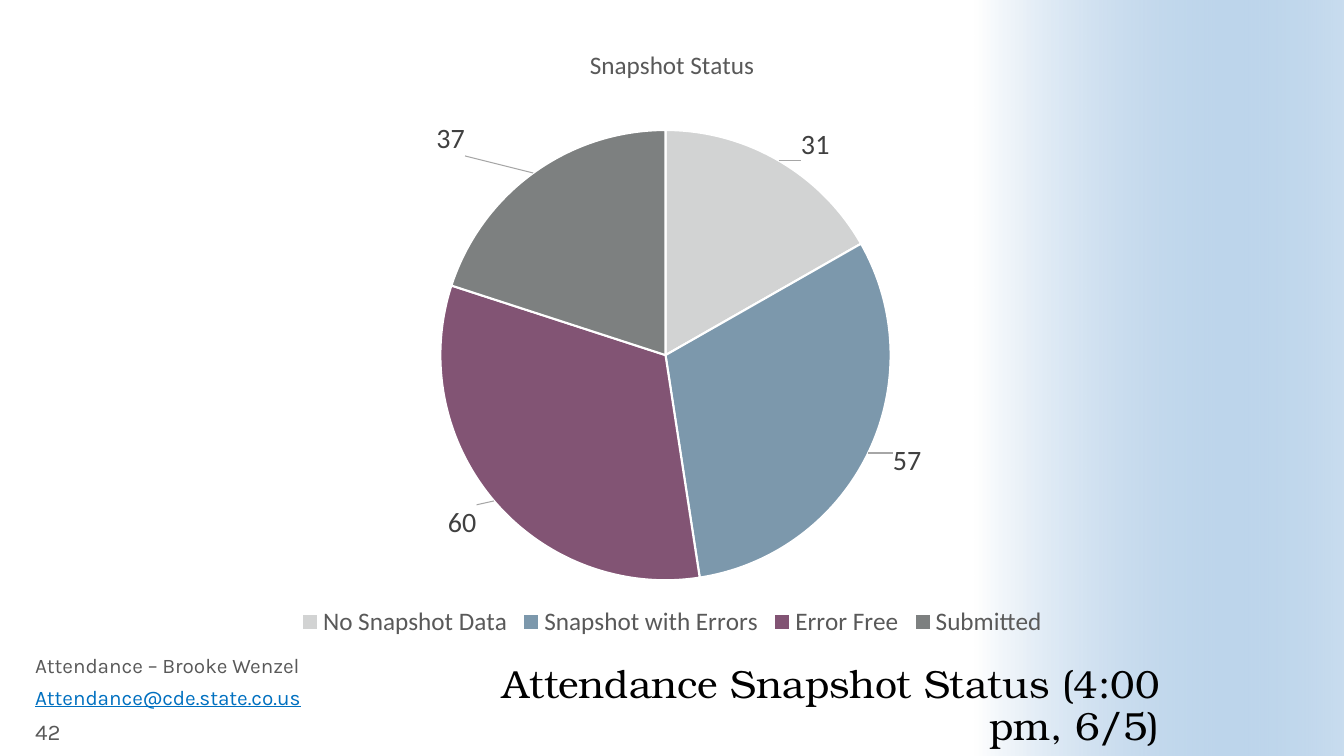
from lxml import etree
from pptx import Presentation
from pptx import util as u
from pptx.chart import data as chart_data
from pptx.dml.color import RGBColor
from pptx.enum import chart as charts, shapes, text
from pptx.oxml import ns, parse_xml

COLOURS = {
    "white": "FFFFFF", "panel": "488BC9", "title": "000000", "grey": "595959",
    "link": "0070C0", "label": "404040", "leader": "A6A6A6",
}
STATUSES = [
    ("No Snapshot Data", 31, "D2D3D3", (0.015, 0.01)),
    ("Snapshot with Errors", 57, "7C98AC", (0.015, -0.02)),
    ("Error Free", 60, "825474", (-0.01, 0)),
    ("Submitted", 37, "7D8080", (-0.05, -0.02)),
]


def colour(name):
    """Return the colour for a palette name or a hex string."""
    return RGBColor.from_string(COLOURS.get(name, name))


def set_font(font, name, size, tint):
    """Set typeface, size and colour of a font."""
    font.name, font.size, font.bold = name, u.Pt(size), False
    font.color.rgb = colour(tint)


def manual_layout(x, y, width=None, height=None):
    """Build a chart layout element from fractions of the chart."""
    values = [("x", x), ("y", y)]
    if width is not None:
        values = [("layoutTarget", "inner"), ("xMode", "edge"), ("yMode", "edge"),
                  *values, ("w", width), ("h", height)]
    layout = etree.Element(ns.qn("c:layout"))
    manual = etree.SubElement(layout, ns.qn("c:manualLayout"))
    for tag, value in values:
        etree.SubElement(manual, ns.qn(f"c:{tag}"), val=str(value))
    return layout


def add_panel(page, left, top, width, height):
    """Draw the side panel that fades from white to translucent blue."""
    panel = page.shapes.add_shape(
        shapes.MSO_SHAPE.RECTANGLE, u.Pt(left), u.Pt(top), u.Pt(width), u.Pt(height))
    panel.shadow.inherit = False
    panel.line.fill.background()
    panel.fill.gradient()
    panel.fill.gradient_angle = 0
    for stop, name in zip(panel.fill.gradient_stops, ("white", "panel")):
        stop.color.rgb = colour(name)
    tint = panel.fill._fill._gradFill.findall(".//" + ns.qn("a:srgbClr"))[-1]
    etree.SubElement(tint, ns.qn("a:alpha"), val="30000")


def add_status_chart(page, left, top, width, height):
    """Add the pie of snapshot statuses with its title, legend and labels."""
    source = chart_data.CategoryChartData()
    source.categories = [status[0] for status in STATUSES]
    source.add_series("Series 1", [status[1] for status in STATUSES])
    chart = page.shapes.add_chart(
        charts.XL_CHART_TYPE.PIE, u.Pt(left), u.Pt(top), u.Pt(width), u.Pt(height), source).chart
    set_font(chart.font, "Calibri", 10, "title")
    chart.has_title = True
    title = chart.chart_title.text_frame.paragraphs[0]
    title.text = "Snapshot Status"
    set_font(title.font, "Calibri", 18, "grey")
    chart.has_legend = True
    chart.legend.position = charts.XL_LEGEND_POSITION.BOTTOM
    chart.legend.include_in_layout = False
    set_font(chart.legend.font, "Calibri", 18, "grey")

    plot_area = chart._chartSpace.chart.plotArea
    for old in plot_area.findall(ns.qn("c:layout")):
        plot_area.remove(old)
    plot_area.insert(0, manual_layout(0.32, 0.17, 0.35, 0.73))

    plot = chart.plots[0]
    plot.vary_by_categories = True
    series = plot.series[0]
    labels = series.data_labels
    labels.show_value = True
    labels.position = charts.XL_LABEL_POSITION.OUTSIDE_END
    set_font(labels.font, "Calibri", 20, "label")
    for index, (_, _, fill, offset) in enumerate(STATUSES):
        point = series.points[index]
        point.format.fill.solid()
        point.format.fill.fore_color.rgb = colour(fill)
        point.format.line.color.rgb = colour("white")
        point.format.line.width = u.Pt(1.5)
        set_font(point.data_label.font, "Calibri", 20, "label")
        point.data_label.position = charts.XL_LABEL_POSITION.OUTSIDE_END
        element = labels._element.findall(ns.qn("c:dLbl"))[index]
        element.insert(1, manual_layout(*offset))
    for old in labels._element.findall(ns.qn("c:showLeaderLines")):
        labels._element.remove(old)
    etree.SubElement(labels._element, ns.qn("c:showLeaderLines"), val="1")
    labels._element.append(parse_xml(
        f'<c:leaderLines {ns.nsdecls("c", "a")}><c:spPr><a:ln w="9525"><a:solidFill>'
        f'<a:srgbClr val="{COLOURS["leader"]}"/></a:solidFill></a:ln></c:spPr></c:leaderLines>'))


def add_text(page, box, words, font, size, tint, anchor="TOP", spacing=1.0):
    """Place one paragraph in the given box and return both."""
    frame = page.shapes.add_textbox(*map(u.Pt, box)).text_frame
    frame.word_wrap = True
    frame.vertical_anchor = text.MSO_ANCHOR[anchor]
    para = frame.paragraphs[0]
    para.text = words
    para.line_spacing = spacing
    set_font(para.font, font, size, tint)
    return frame, para


def add_title(page, left, top, width, height):
    """Add the right-aligned slide title without insets."""
    frame, para = add_text(page, (left, top, width, height),
                           "Attendance Snapshot Status (4:00 pm, 6/5)",
                           "TeX Gyre Bonum", 28, "title", "BOTTOM", 0.9)
    frame.margin_left = frame.margin_right = frame.margin_top = frame.margin_bottom = 0
    para.alignment = text.PP_ALIGN.RIGHT


def add_contact(page, left, top, width, row):
    """Stack the contact name, address and page number."""
    add_text(page, (left, top, width, row), "Attendance – Brooke Wenzel",
             "Karla", 14.8, "grey", spacing=0.8)
    _, address = add_text(page, (left, top + row, width, row), "Attendance@cde.state.co.us",
                          "Karla", 14.8, "link", spacing=0.8)
    address.font.underline = True
    add_text(page, (left, top + 2 * row, 61, row), "42", "Karla", 16, "grey", "MIDDLE")


def main():
    """Build the slide and save it."""
    deck = Presentation()
    deck.slide_width, deck.slide_height = u.Pt(960), u.Pt(540)
    page = deck.slides.add_slide(deck.slide_layouts[6])
    add_panel(page, 696.2, 0, 263.8, 540)
    add_title(page, 306.7, 464.4, 521.3, 70.6)
    add_status_chart(page, 18, 18, 924, 440.6)
    add_contact(page, 18, 466, 280, 22.7)
    deck.save("out.pptx")


if __name__ == "__main__":
    main()
